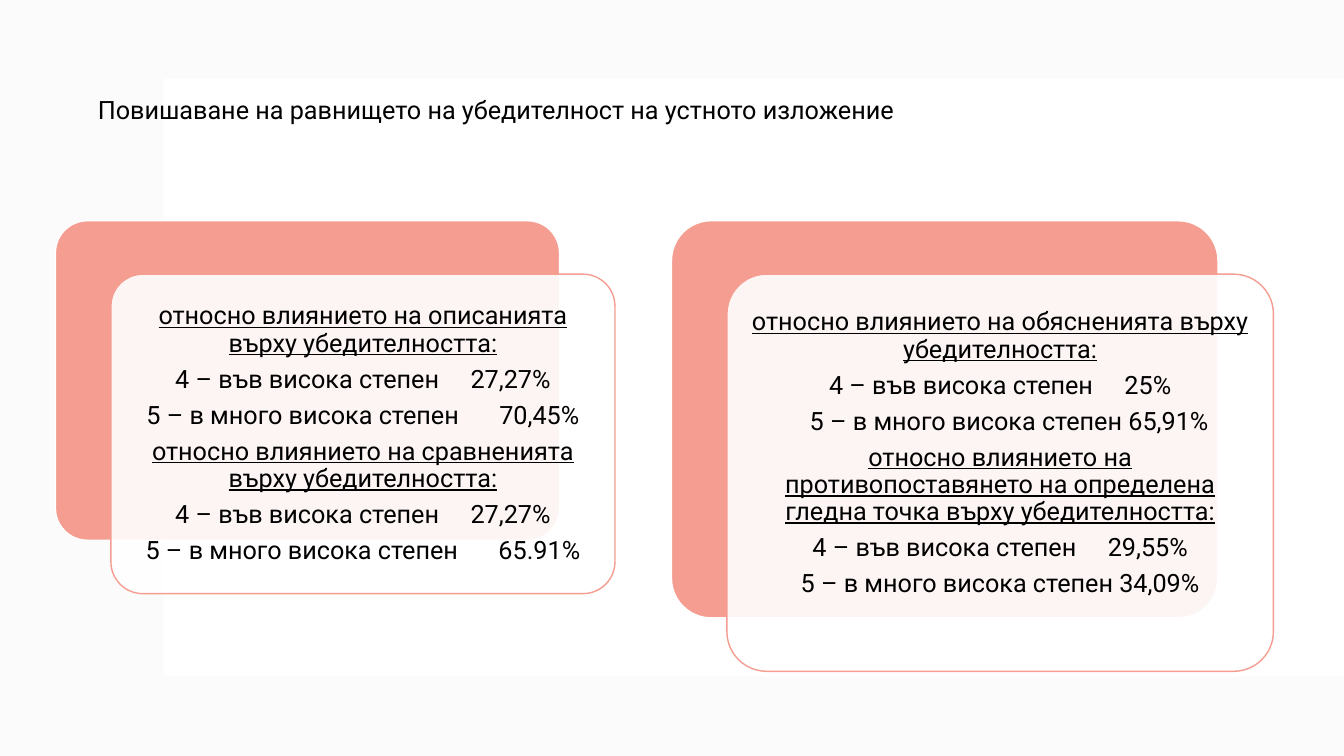
import pptx
import pptx.dml.color
import pptx.enum.shapes
import pptx.enum.text
import pptx.oxml
import pptx.oxml.ns
import pptx.util

Inches = pptx.util.Inches
Pt = pptx.util.Pt
RGBColor = pptx.dml.color.RGBColor
PP_ALIGN = pptx.enum.text.PP_ALIGN
MSO_ANCHOR = pptx.enum.text.MSO_ANCHOR
MSO_SHAPE = pptx.enum.shapes.MSO_SHAPE

WHITE = RGBColor(0xFF, 0xFF, 0xFF)
BLACK = RGBColor(0, 0, 0)
PALE_GREY = RGBColor(0xF4, 0xF4, 0xF4)
SALMON = RGBColor(0xF4, 0x9D, 0x90)

TITLE = "Повишаване на равнището на убедителност на устното изложение"
HIGH = "4 – във висока степен"
VERY_HIGH = "5 – в много висока степен"
PANEL_TOP = 2.19
CARD_OFFSET_X, CARD_OFFSET_Y = 0.55, 0.53
CARD_INSET = 0.07
HIGH_TAB, VERY_HIGH_TAB = 2.93, 3.5

# Each line: text and its paragraph options
DESCRIPTIONS_AND_COMPARISONS = [
    ("относно влиянието на описанията върху убедителността:", {"underline": True}),
    (f"{HIGH}\t27,27%", {"tab": HIGH_TAB}),
    (f"{VERY_HIGH}\t70,45%", {"tab": VERY_HIGH_TAB}),
    ("относно влиянието на сравненията върху убедителността:", {"underline": True}),
    (f"{HIGH}\t27,27%", {"tab": HIGH_TAB}),
    (f"{VERY_HIGH}\t65.91%", {"tab": VERY_HIGH_TAB}),
]
EXPLANATIONS_AND_CONTRAST = [
    ("относно влиянието на обясненията върху убедителността:", {"underline": True}),
    (f"{HIGH}\t25%", {"tab": HIGH_TAB}),
    (f"{VERY_HIGH} 65,91%", {"indent": 0.18}),
    ("относно влиянието на противопоставянето на определена "
     "гледна точка върху убедителността:", {"underline": True}),
    (f"{HIGH}\t29,55%", {"tab": HIGH_TAB}),
    (f"{VERY_HIGH} 34,09%", {}),
]


def write_text(paragraph, text, align=PP_ALIGN.LEFT, line_spacing=1.0,
               space_after=0, underline=False, tab=None, indent=0):
    paragraph.alignment = align
    paragraph.line_spacing = line_spacing
    paragraph.space_before = Pt(0)
    paragraph.space_after = Pt(space_after)
    properties = paragraph._p.get_or_add_pPr()
    if indent:
        properties.set("marL", str(Inches(indent)))
    if tab:
        properties.append(pptx.oxml.parse_xml(
            f'<a:tabLst {pptx.oxml.ns.nsdecls("a")}>'
            f'<a:tab pos="{Inches(tab)}" algn="l"/></a:tabLst>'))
    run = paragraph.add_run()
    run.text = text
    run.font.name = "Roboto"
    run.font.size = Pt(18)
    run.font.color.rgb = BLACK
    run.font.underline = underline


def add_block(slide, left, top, width, height, fill, opacity=100,
              line=None, rounding=None):
    """Add a filled rectangle; rounding is the corner share of its short side."""
    kind = MSO_SHAPE.RECTANGLE if rounding is None else MSO_SHAPE.ROUNDED_RECTANGLE
    block = slide.shapes.add_shape(
        kind, Inches(left), Inches(top), Inches(width), Inches(height))
    block.shadow.inherit = False
    if rounding is not None:
        block.adjustments[0] = rounding
    block.fill.solid()
    block.fill.fore_color.rgb = fill
    if opacity < 100:
        color = block.element.spPr.find(".//" + pptx.oxml.ns.qn("a:srgbClr"))
        color.append(pptx.oxml.parse_xml(
            f'<a:alpha {pptx.oxml.ns.nsdecls("a")} val="{opacity * 1000}"/>'))
    if line is None:
        block.line.fill.background()
    else:
        block.line.color.rgb = line
        block.line.width = Pt(1)
    return block


def add_panel(slide, left, width, height, lines, bottom_inset=CARD_INSET):
    """Add a salmon backing with a translucent text card offset over it."""
    add_block(slide, left, PANEL_TOP, width, height, SALMON,
              line=WHITE, rounding=0.1)
    card = add_block(slide, left + CARD_OFFSET_X, PANEL_TOP + CARD_OFFSET_Y,
                     width, height, WHITE, opacity=90, line=SALMON, rounding=0.1)
    frame = card.text_frame
    frame.word_wrap = True
    frame.vertical_anchor = MSO_ANCHOR.MIDDLE
    frame.margin_left = frame.margin_right = frame.margin_top = Inches(CARD_INSET)
    frame.margin_bottom = Inches(bottom_inset)
    for index, (text, options) in enumerate(lines):
        paragraph = frame.add_paragraph() if index else frame.paragraphs[0]
        write_text(paragraph, text, align=PP_ALIGN.CENTER, line_spacing=0.9,
                   space_after=6.3, **options)


def place_title(slide):
    title = slide.shapes.title
    title.left, title.top = Inches(0.87), Inches(0.89)
    title.width, title.height = Inches(11.6), Inches(0.4)
    frame = title.text_frame
    frame.word_wrap = True
    frame.auto_size = pptx.enum.text.MSO_AUTO_SIZE.SHAPE_TO_FIT_TEXT
    frame.vertical_anchor = MSO_ANCHOR.TOP
    write_text(frame.paragraphs[0], TITLE)
    # Bring the title in front of the backdrop
    title.element.getparent().append(title.element)


def main():
    presentation = pptx.Presentation()
    presentation.slide_width = Inches(13.33)
    presentation.slide_height = Inches(7.5)
    slide = presentation.slides.add_slide(presentation.slide_layouts[5])

    add_block(slide, 0, 0, 13.33, 7.5, PALE_GREY, opacity=35)
    add_block(slide, 1.62, 0.78, 11.71, 5.93, WHITE)
    add_panel(slide, 0.55, 5, 3.17, DESCRIPTIONS_AND_COMPARISONS)
    add_panel(slide, 6.66, 5.42, 3.94, EXPLANATIONS_AND_CONTRAST, bottom_inset=0.45)
    place_title(slide)

    presentation.save("out.pptx")


if __name__ == "__main__":
    main()
